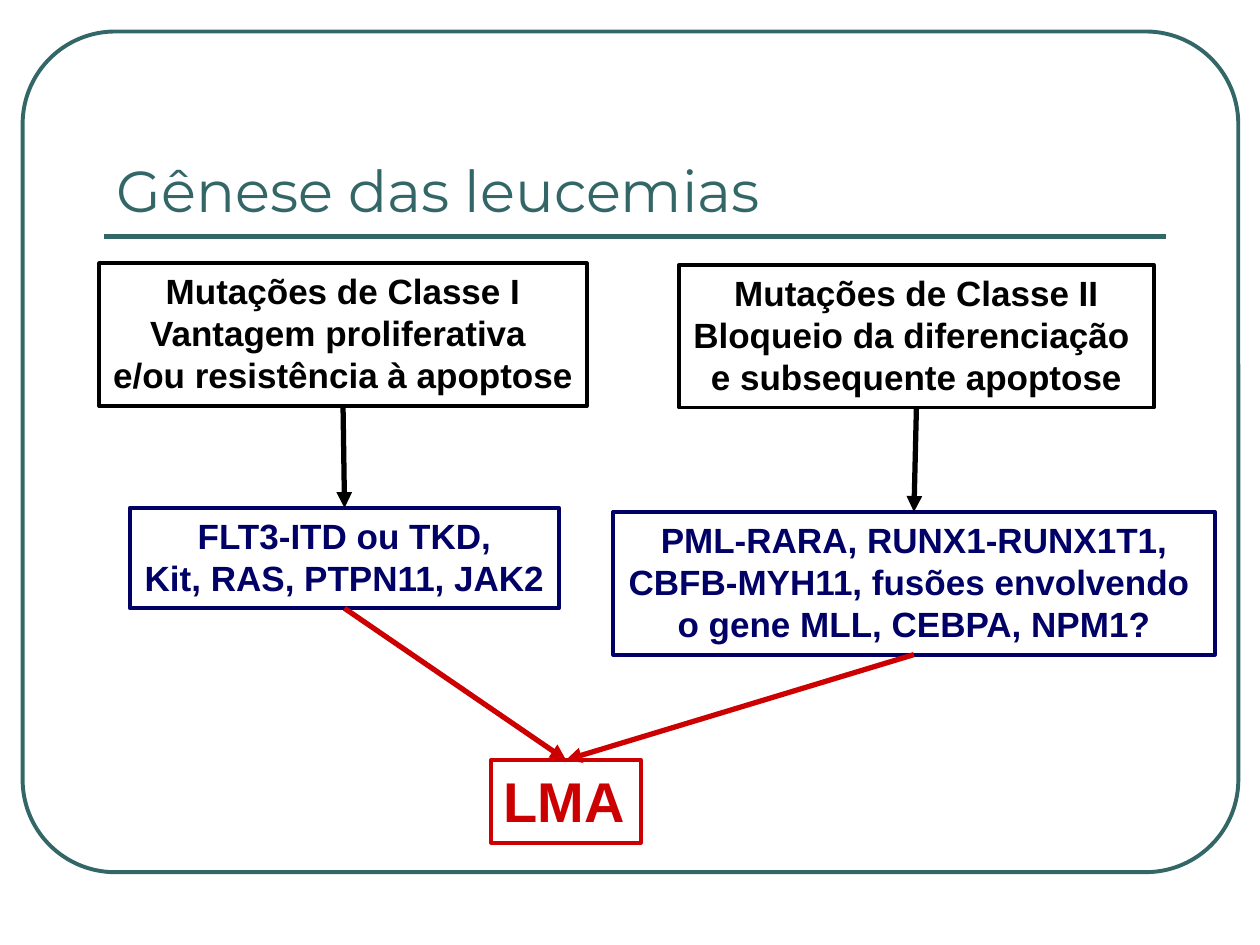
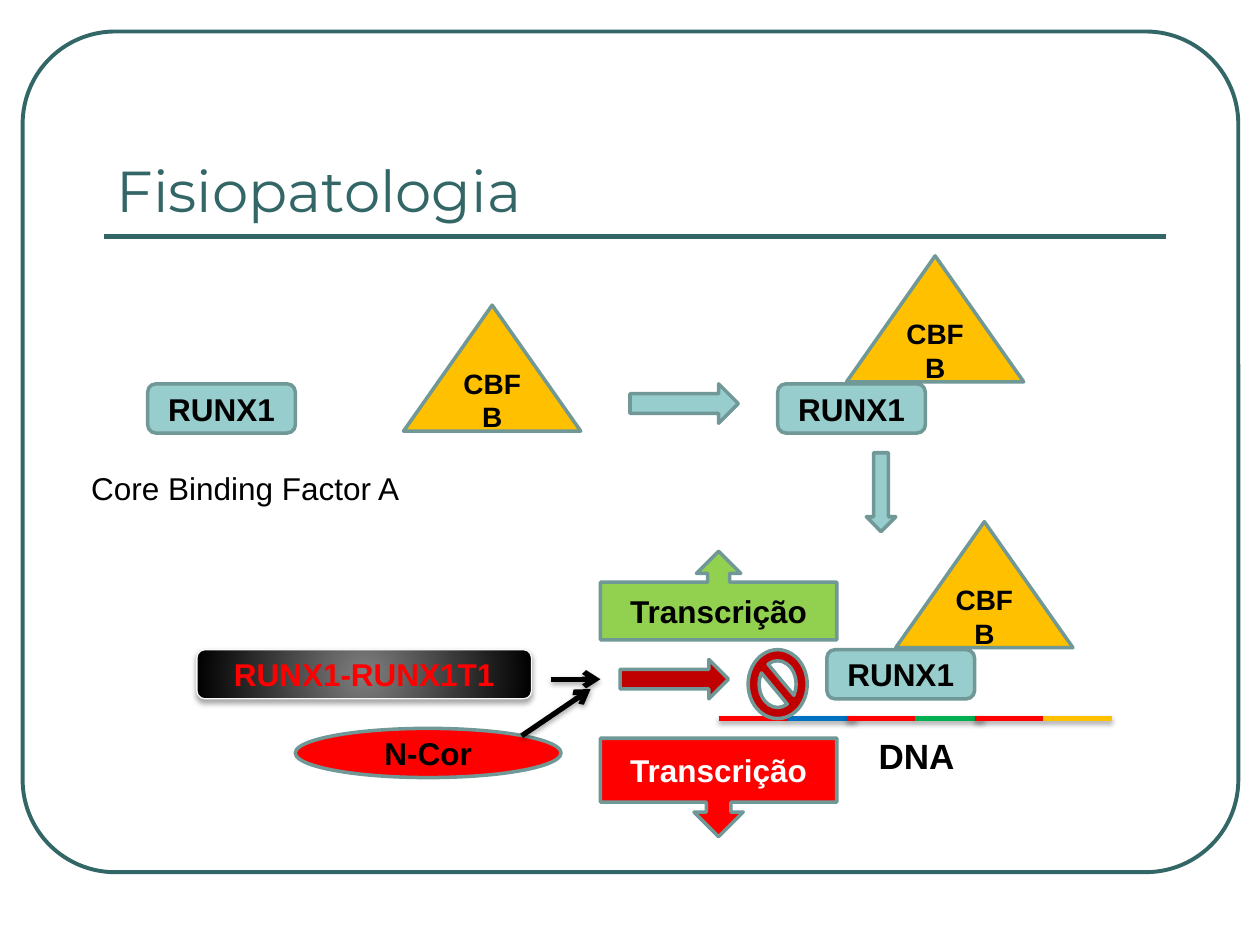
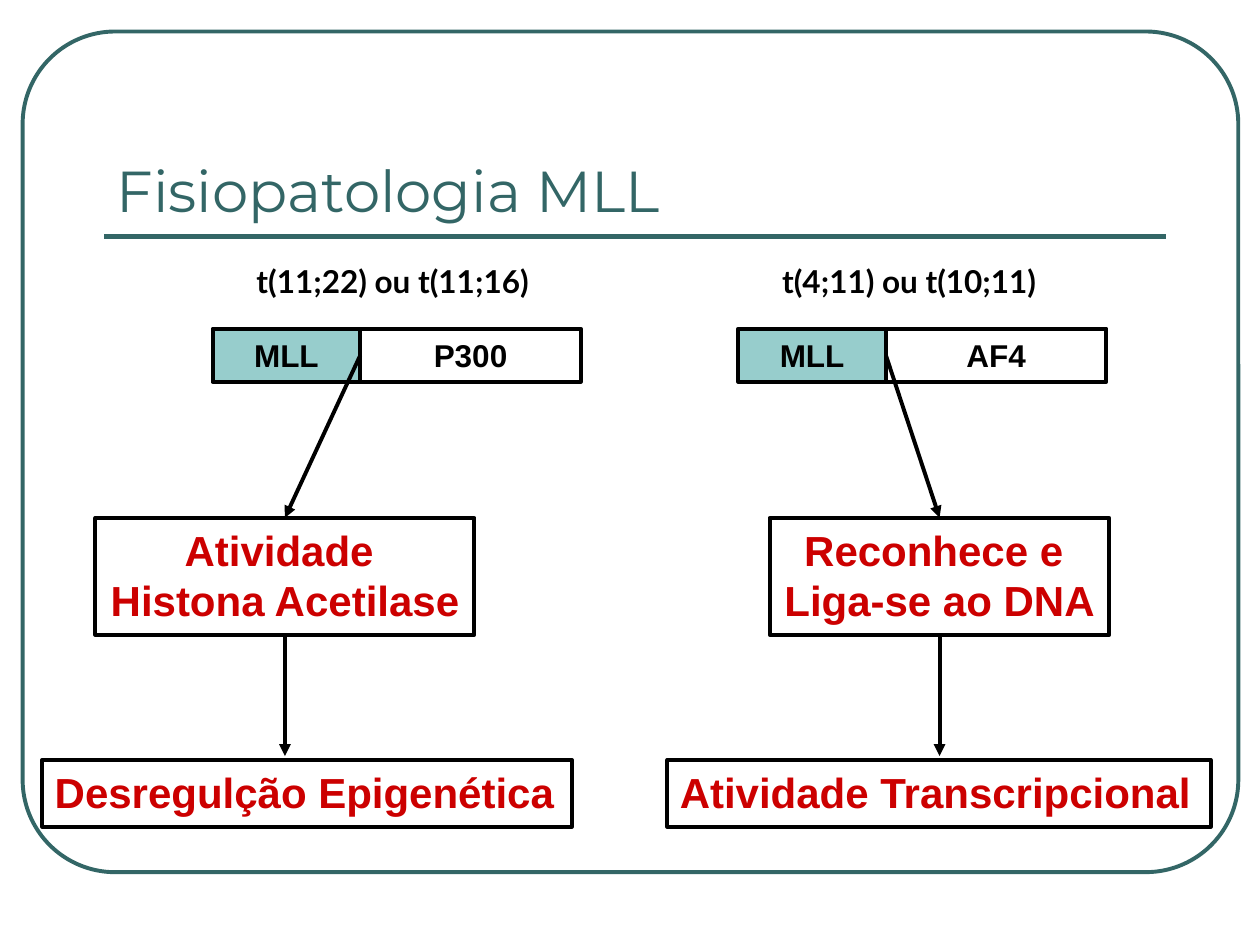
from lxml.etree import SubElement
from pptx import Presentation
from pptx.dml.color import RGBColor
from pptx.enum.shapes import MSO_CONNECTOR, MSO_SHAPE as SHAPE
from pptx.enum.text import MSO_ANCHOR as ANCHOR, MSO_AUTO_SIZE as FIT, PP_ALIGN as ALIGN
from pptx.oxml.ns import qn
from pptx.util import Inches, Pt

TEAL = RGBColor(0x33, 0x66, 0x66)
AQUA = RGBColor(0x97, 0xCD, 0xCC)
EDGE = RGBColor(0x70, 0x98, 0x97)
BLACK = RGBColor(0, 0, 0)
WHITE = RGBColor(0xFF, 0xFF, 0xFF)
PALE = RGBColor(0xF9, 0xF9, 0xF9)
GRAY = RGBColor(0x7F, 0x7F, 0x7F)
NAVY = RGBColor(0, 0, 0x66)
CRIMSON = RGBColor(0xCC, 0, 0)
DARK_RED = RGBColor(0xC0, 0, 0)
RED = RGBColor(0xFF, 0, 0)
GOLD = RGBColor(0xFF, 0xC0, 0)
LIME = RGBColor(0x92, 0xD0, 0x50)
BLUE = RGBColor(0, 0x70, 0xC0)
GREEN = RGBColor(0, 0xB0, 0x50)

COLS, ROWS = 128, 96
TOP, LEFT, BOTTOM, RIGHT = range(4)  # connection sites of a rectangle


class Deck:
    """Holds the style and the current slide; lengths are grid columns and rows."""

    def __init__(self):
        self.prs = Presentation()
        self.prs.slide_width, self.prs.slide_height = Inches(10), Inches(7.5)
        self.s = None

    def x(self, cols):
        return int(self.prs.slide_width * cols / COLS)

    def y(self, rows):
        return int(self.prs.slide_height * rows / ROWS)

    def place(self, at):
        left, top, width, height = at
        return self.x(left), self.y(top), self.x(width), self.y(height)

    def slide(self, title):
        self.s = self.prs.slides.add_slide(self.prs.slide_layouts[6])
        frame = self.shape(SHAPE.ROUNDED_RECTANGLE, (2.3, 3.2, 123.5, 85.4), None, TEAL, 2.25)
        frame.adjustments[0] = 0.11
        self.line((10.6, 24), (118.4, 24), TEAL)
        self.label(title, (10.6, 7.4, 107.8, 16), 33, TEAL, "Montserrat", False,
                   anchor=ANCHOR.BOTTOM, grow=False)

    def fill_text(self, sp, text, size, color, font="Arial", bold=True,
                  align=ALIGN.CENTER, anchor=ANCHOR.MIDDLE, wrap=True, grow=False):
        tf = sp.text_frame
        tf.word_wrap, tf.vertical_anchor = wrap, anchor
        tf.auto_size = FIT.SHAPE_TO_FIT_TEXT if grow else FIT.NONE
        for i, words in enumerate(text.split("\n")):
            p = tf.add_paragraph() if i else tf.paragraphs[0]
            p.alignment = align
            r = p.add_run()
            r.text = words
            r.font.name, r.font.size, r.font.bold = font, Pt(size), bold
            r.font.color.rgb = color

    def label(self, text, at, size, color=BLACK, font="Arial", bold=True,
              anchor=ANCHOR.TOP, grow=True):
        sp = self.s.shapes.add_textbox(*self.place(at))
        self.fill_text(sp, text, size, color, font, bold, ALIGN.LEFT, anchor, not grow, grow)

    def shape(self, kind, at, fill, edge=EDGE, width=2, text="", size=18, color=BLACK):
        sp = self.s.shapes.add_shape(kind, *self.place(at))
        sp.shadow.inherit = False
        if fill is None:
            sp.fill.background()
        else:
            sp.fill.solid()
            sp.fill.fore_color.rgb = fill
        sp.line.color.rgb, sp.line.width = edge, Pt(width)
        if text:
            self.fill_text(sp, text, size, color)
        return sp

    def box(self, text, at, size, color, edge, align=ALIGN.CENTER):
        sp = self.shape(SHAPE.RECTANGLE, at, None, edge, 2.25)
        self.fill_text(sp, text, size, color, align=align, anchor=ANCHOR.TOP,
                       wrap=False, grow=True)
        return sp

    def line(self, begin, end, color=BLACK, width=3, head=None, shadow=False):
        """Each end is a grid point or a pair of shape and connection site."""
        joined = [not isinstance(e[0], (int, float)) for e in (begin, end)]
        (x1, y1), (x2, y2) = [(0, 0) if j else e for j, e in zip(joined, (begin, end))]
        c = self.s.shapes.add_connector(MSO_CONNECTOR.STRAIGHT, self.x(x1), self.y(y1),
                                        self.x(x2), self.y(y2))
        if joined[0]:
            c.begin_connect(*begin)
        if joined[1]:
            c.end_connect(*end)
        c.line.color.rgb, c.line.width = color, Pt(width)
        spPr = c._element.spPr
        if head:
            SubElement(spPr.find(qn("a:ln")), qn("a:tailEnd"), type=head)
        effects = SubElement(spPr, qn("a:effectLst"))
        if shadow:
            self.shadow(effects)

    def shadow(self, effects):
        outer = SubElement(effects, qn("a:outerShdw"), blurRad=str(Pt(3.1)), dist=str(Pt(1.8)),
                           dir="5400000", rotWithShape="0")
        black = SubElement(outer, qn("a:srgbClr"), val=str(BLACK))
        SubElement(black, qn("a:alpha"), val="35000")

    def glow(self, sp, inner, outer):
        """Radial gradient from the middle, with a soft shadow."""
        sp.fill.gradient()
        for stop, color in zip(sp.fill.gradient_stops, (inner, outer)):
            stop.color.rgb = color
        spPr = sp._element.spPr
        grad = spPr.find(qn("a:gradFill"))
        grad.remove(grad.find(qn("a:lin")))
        circle = SubElement(grad, qn("a:path"), {"path": "circle"})
        SubElement(circle, qn("a:fillToRect"), l="50000", t="50000", r="50000", b="50000")
        self.shadow(spPr.find(qn("a:effectLst")))


def genesis(d):
    d.slide("Gênese das leucemias")
    lma = d.box("LMA", (49.9, 77.2, 15.2, 8.4), 32, CRIMSON, CRIMSON, ALIGN.LEFT)
    paths = [
        ("Mutações de Classe I\nVantagem proliferativa \ne/ou resistência à apoptose",
         (10.1, 26.75, 49.5, 14.5),
         "FLT3-ITD ou TKD,\nKit, RAS, PTPN11, JAK2", (13.2, 51.6, 43.6, 10.2)),
        ("Mutações de Classe II\nBloqueio da diferenciação \ne subsequente apoptose",
         (69, 26.9, 48.2, 14.5),
         "PML-RARA, RUNX1-RUNX1T1,\nCBFB-MYH11, fusões envolvendo \no gene MLL, CEBPA, NPM1?",
         (62.3, 52, 61.1, 14.5)),
    ]
    for effect, effect_at, genes, genes_at in paths:
        mutation = d.box(effect, effect_at, 20, BLACK, BLACK)
        gene = d.box(genes, genes_at, 20, NAVY, NAVY)
        d.line((mutation, BOTTOM), (gene, TOP), head="triangle")
        d.line((gene, BOTTOM), (lma, TOP), CRIMSON, head="triangle")


def pathophysiology(d):
    d.slide("Fisiopatologia")
    # Core binding factor: apart, joined, and on the DNA
    for runx, cbfb in [((15, 39), (41, 31)), ((79, 39), (86, 26)), ((84, 66), (91, 53))]:
        d.shape(SHAPE.ROUNDED_RECTANGLE, (*runx, 15, 5), AQUA, text="RUNX1")
        d.shape(SHAPE.ISOSCELES_TRIANGLE, (*cbfb, 18, 12.8), GOLD, text="CBFB", size=16)
    d.label("Core Binding Factor A", (8, 47, 34.2, 5.1), 18, bold=False)
    d.shape(SHAPE.RIGHT_ARROW, (64, 39, 11, 4), AQUA)
    d.shape(SHAPE.DOWN_ARROW, (88, 46, 3, 8), AQUA)
    # DNA strand
    for start, color in [(73, RED), (80, BLUE), (86, RED), (93, GREEN), (99, RED), (106, GOLD)]:
        d.line((start, 73), (start + 7, 73), color, shadow=True)
    d.label("DNA", (88, 74, 10.4, 5.6), 20)
    # Transcription up and down
    d.shape(SHAPE.UP_ARROW_CALLOUT, (61, 56, 24, 9), LIME, text="Transcrição")
    d.shape(SHAPE.DOWN_ARROW_CALLOUT, (61, 75, 24, 10), RED, text="Transcrição", color=WHITE)
    # Fusion protein and its blocking effect
    fusion = d.shape(SHAPE.ROUNDED_RECTANGLE, (20, 66, 34, 5), BLACK, PALE, 0.75,
                     "RUNX1-RUNX1T1", color=RED)
    d.glow(fusion, GRAY, BLACK)
    d.shape(SHAPE.OVAL, (30, 74, 27, 5), RED, text="N-Cor")
    d.shape(SHAPE.NO_SYMBOL, (76, 66, 6, 7), DARK_RED)
    d.shape(SHAPE.RIGHT_ARROW, (63, 67, 11, 4), DARK_RED)
    for begin, end in [((56, 69), (61, 69)), ((53, 74.75), (60, 70))]:
        d.line(begin, end, head="arrow", shadow=True)


def mll(d):
    d.slide("Fisiopatologia MLL")
    fusions = [
        (21.6, "t(11;22) ou t(11;16)", 35.6, "P300",
         "Atividade \nHistona Acetilase", (9.7, 52.6, 38.5, 11.9),
         "Desregulção Epigenética", (4.3, 77.2, 53.8, 6.8)),
        (75, "t(4;11) ou t(10;11)", 33.5, "AF4",
         "Reconhece e \nLiga-se ao DNA", (78.2, 52.6, 34.5, 11.9),
         "Atividade Transcripcional", (67.8, 77.2, 55.2, 6.8)),
    ]
    for left, name, width, partner, action, action_at, result, result_at in fusions:
        # Fused gene
        d.label(name, (left + 3.2, 26, width, 5.1), 18, font="Lato")
        gene = d.shape(SHAPE.RECTANGLE, (left, 33.4, 15, 5.4), AQUA, BLACK, 2.25, "MLL")
        d.shape(SHAPE.RECTANGLE, (left + 15, 33.4, 22.4, 5.4), None, BLACK, 2.25, partner)
        # Action and result
        act = d.box(action, action_at, 24, CRIMSON, BLACK)
        d.box(result, result_at, 24, CRIMSON, BLACK, ALIGN.LEFT)
        d.line((gene, RIGHT), (act, TOP), width=2.25, head="triangle")
        middle = action_at[0] + action_at[2] / 2
        d.line((act, BOTTOM), (middle, 76.8), width=2.25, head="triangle")


def main():
    d = Deck()
    for build in (genesis, pathophysiology, mll):
        build(d)
    d.prs.save("out.pptx")


if __name__ == "__main__":
    main()
